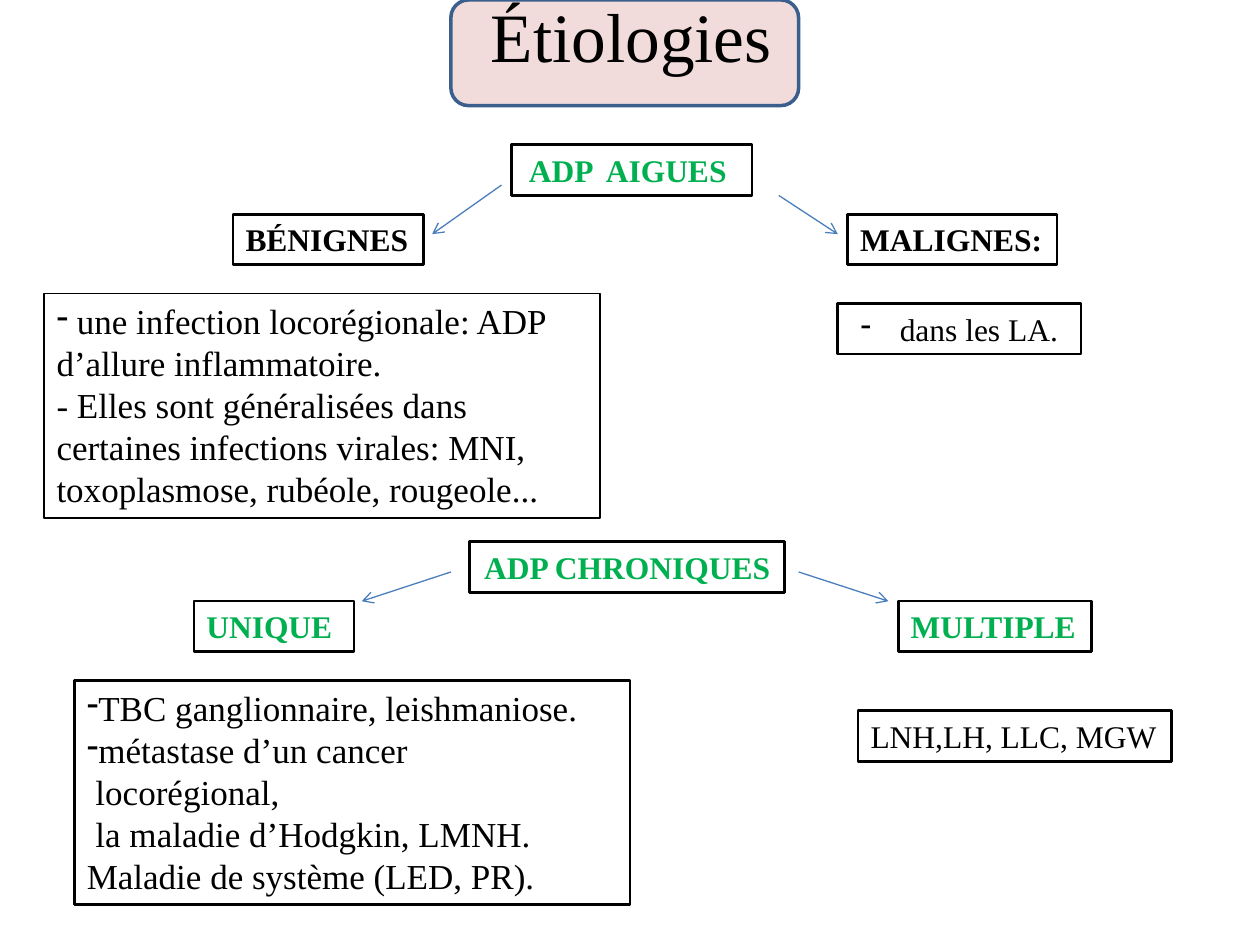
from lxml import etree
from pptx import Presentation
from pptx import util as u
from pptx.dml.color import RGBColor
from pptx.enum import shapes, text
from pptx.oxml.ns import qn

FONT = "Times New Roman"
COLORS = {"black": "000000", "green": "00B050", "pink": "F2DCDB",
          "frame": "3A5F8C", "arrow": "4B7EBC"}
TITLE = "Étiologies"
ROW = 1.02

# left, top, width, wording, colour, centred
HEADINGS = [
    (10.31, 2.92, 4.85, "ADP  AIGUES ", "green", True),
    (4.7, 4.32, 3.84, "BÉNIGNES", "black", False),
    (17.09, 4.32, 4.22, "MALIGNES:", "black", False),
    (9.47, 10.92, 6.35, "ADP CHRONIQUES", "green", True),
    (3.91, 12.12, 3.23, "UNIQUE", "green", False),
    (18.11, 12.12, 3.89, "MULTIPLE", "green", False),
]
# left, top, width, height, size, line width, centred, hanging, wrap, (bulleted, wording) lines
DETAILS = [
    (0.89, 5.92, 11.2, 4.52, 20, 1, False, 0, True, [
        (True, " une infection locorégionale: ADP d’allure inflammatoire."),
        (False, "- Elles sont généralisées dans certaines infections virales: "
                "MNI, toxoplasmose, rubéole, rougeole..."),
    ]),
    (16.89, 6.12, 4.9, ROW, 18, 1.5, True, 0.79, True, [(True, "dans les LA.")]),
    (1.5, 13.72, 11.2, 4.52, 20, 1.5, False, 0, True, [
        (True, "TBC ganglionnaire, leishmaniose."),
        (True, "métastase d’un cancer"),
        (False, " locorégional,"),
        (False, " la maladie d’Hodgkin, LMNH."),
        (False, "Maladie de système (LED, PR)."),
    ]),
    (17.3, 14.33, 6.32, ROW, 18, 1.5, False, 0, False, [(False, "LNH,LH, LLC, MGW")]),
]
ARROWS = [
    (10.11, 3.73, 8.71, 4.72),
    (15.7, 3.94, 16.89, 4.72),
    (9.09, 11.53, 7.29, 12.12),
    (16.1, 11.53, 17.91, 12.12),
]


def rgb(name):
    return RGBColor.from_string(COLORS[name])


def cm(*values):
    return [u.Cm(v) for v in values]


def add_run(p, wording, size, color="black", bold=False):
    r = p.add_run()
    r.text = wording
    r.font.name, r.font.size, r.font.bold = FONT, u.Pt(size), bold
    r.font.color.rgb = rgb(color)


def set_bullet(p, hanging):
    pPr = p._p.get_or_add_pPr()
    pPr.set("marL", str(u.Cm(hanging)))
    pPr.set("indent", str(-u.Cm(hanging)))
    etree.SubElement(pPr, qn("a:buFontTx"))
    etree.SubElement(pPr, qn("a:buChar")).set("char", "-")


def add_box(s, place, lines, size, color="black", bold=False, width=1.5,
            centred=False, hanging=0, wrap=False):
    sp = s.shapes.add_textbox(*cm(*place))
    sp.line.color.rgb = rgb("black")
    sp.line.width = u.Pt(width)
    tf = sp.text_frame
    tf.word_wrap = wrap
    tf.auto_size = text.MSO_AUTO_SIZE.SHAPE_TO_FIT_TEXT
    for i, (bulleted, wording) in enumerate(lines):
        p = tf.add_paragraph() if i else tf.paragraphs[0]
        p.alignment = text.PP_ALIGN.CENTER if centred else text.PP_ALIGN.LEFT
        if bulleted:
            set_bullet(p, hanging)
        add_run(p, wording, size, color, bold)


def add_title(s):
    sp = s.shapes.add_shape(shapes.MSO_SHAPE.ROUNDED_RECTANGLE, *cm(9.09, 0, 7.01, 2.13))
    sp.shadow.inherit = False
    sp.fill.solid()
    sp.fill.fore_color.rgb = rgb("pink")
    sp.line.color.rgb = rgb("frame")
    sp.line.width = u.Pt(2)
    title = s.shapes.title
    title.left, title.top, title.width, title.height = cm(1.3, 0.53, 22.86, 1.96)
    sp._element.addnext(title._element)
    tf = title.text_frame
    tf.auto_size = text.MSO_AUTO_SIZE.NONE
    tf.vertical_anchor = text.MSO_ANCHOR.MIDDLE
    tf.margin_bottom = u.Cm(1.73)
    p = tf.paragraphs[0]
    p.alignment = text.PP_ALIGN.CENTER
    add_run(p, TITLE, 39.6)


def add_arrow(s, ends):
    line = s.shapes.add_connector(shapes.MSO_CONNECTOR.STRAIGHT, *cm(*ends))
    line.line.color.rgb = rgb("arrow")
    line.line.width = u.Pt(0.75)
    etree.SubElement(line.line._get_or_add_ln(), qn("a:tailEnd")).set("type", "arrow")
    etree.SubElement(line._element.spPr, qn("a:effectLst"))


def main():
    """Build the slide on the causes of acute and chronic ADP."""
    prs = Presentation()
    prs.slide_width, prs.slide_height = cm(25.4, 19.05)
    s = prs.slides.add_slide(prs.slide_layouts[5])
    add_title(s)
    for left, top, width, wording, color, centred in HEADINGS:
        add_box(s, (left, top, width, ROW), [(False, wording)], 18, color,
                bold=True, centred=centred)
    for *place, size, width, centred, hanging, wrap, lines in DETAILS:
        add_box(s, place, lines, size, width=width, centred=centred,
                hanging=hanging, wrap=wrap)
    for ends in ARROWS:
        add_arrow(s, ends)
    prs.save("out.pptx")


if __name__ == "__main__":
    main()
